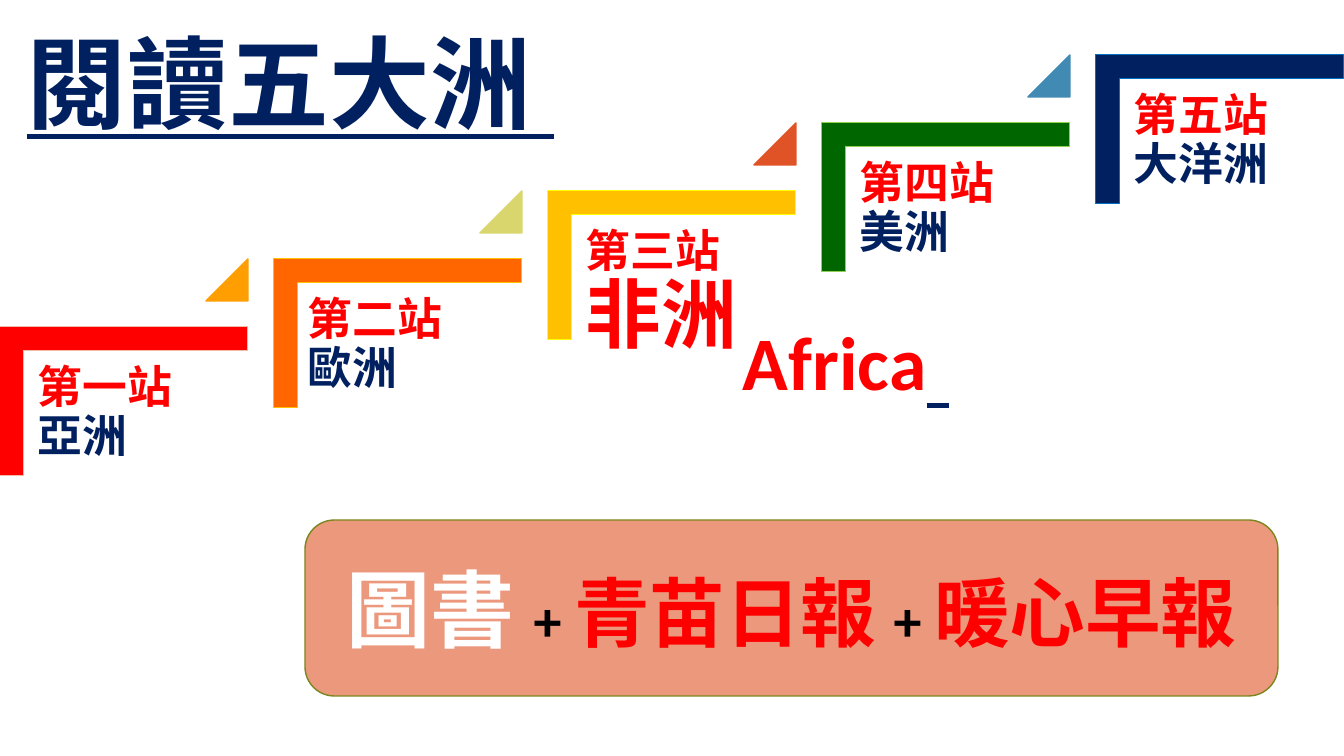
from lxml import etree
from pptx import Presentation, util as u
from pptx.dml.color import RGBColor
from pptx.enum import shapes, text
from pptx.oxml import ns

PX = 914400 / 100.8  # EMU in one px
THEME = {
    "cjk": "Noto Sans CJK SC", "latin": "Calibri",
    "red": "FF0000", "navy": "002060", "white": "FFFFFF", "black": "000000",
    "banner": "EC987D", "banner_line": "7B871D",
    "title": 72, "books": 60, "large": 54, "plus": 40, "step": 32,
}


def add_span(para, words, size, color, font="cjk", underline=False):
    span = para.add_run()
    span.text = words
    span.font.size = u.Pt(THEME[size])
    span.font.bold = True
    span.font.underline = underline
    span.font.name = THEME[font]
    span.font.color.rgb = RGBColor.from_string(THEME[color])
    east_asian = etree.SubElement(span.font._element, ns.qn("a:ea"))
    east_asian.set("typeface", THEME["cjk"])


def add_item(kind, at, fill=None, line=None):
    """Add a preset shape, or a wrapping text box when kind is None."""
    left, top, width, height = [round(n * PX) for n in at]
    if kind is None:
        item = page.shapes.add_textbox(left, top, width, height)
        item.text_frame.word_wrap = True
        return item
    item = page.shapes.add_shape(kind, left, top, width, height)
    item.shadow.inherit = False
    item.fill.solid()
    item.fill.fore_color.rgb = RGBColor.from_string(fill)
    item.line.color.rgb = RGBColor.from_string(line)
    item.line.width = u.Pt(1)
    return item


deck = Presentation()
deck.slide_width, deck.slide_height = round(1344 * PX), round(756 * PX)
page = deck.slides.add_slide(deck.slide_layouts[6])

# Staircase: station, continent, size, colour, bar fill, bar line, triangle, text nudge
steps = [
    ("第一站", "亞洲", "step", "navy", "FF0000", "F2BAA9", "FE9E00", 0),
    ("第二站", "歐洲", "step", "navy", "FF6600", "FFC000", "D9D66D", -4),
    ("第三站", "非洲", "large", "red", "FFC000", "FFFF00", "DF5327", 0),
    ("第四站", "美洲", "step", "navy", "006600", "92D050", "418AB3", 0),
    ("第五站", "大洋洲", "step", "navy", "002060", "0070C0", None, 0),
]
for index, (station, continent, size, color, fill, line, triangle, nudge) in enumerate(steps):
    across, up = 274 * index, 68 * index
    bar = add_item(shapes.MSO_SHAPE.CORNER, (49 + across, 277 - up, 149, 248), fill, line)
    bar.rotation = 90
    bar.adjustments[0] = bar.adjustments[1] = 0.16

    label = add_item(None, (25 + across + nudge, 352 - up, 224, 195))
    frame = label.text_frame
    frame.margin_left = frame.margin_right = round(13 * PX)
    frame.margin_top = frame.margin_bottom = round(13 * PX)
    para = frame.paragraphs[0]
    para.line_spacing = 0.9
    add_span(para, station, "step", "red")
    para.add_line_break()
    add_span(para, continent, size, color)

    if triangle:
        marker = add_item(shapes.MSO_SHAPE.ISOSCELES_TRIANGLE,
                          (206 + across, 259 - up, 42, 42), triangle, triangle)
        marker.adjustments[0] = 1

# Title
title = add_item(None, (17, 19, 550, 127))
title.text_frame.vertical_anchor = text.MSO_ANCHOR.BOTTOM
para = title.text_frame.paragraphs[0]
para.line_spacing = 0.8
add_span(para, "閱讀五大洲 ", "title", "navy", underline=True)

# Reading materials banner
banner = add_item(shapes.MSO_SHAPE.ROUNDED_RECTANGLE, (305, 520, 973, 176),
                  THEME["banner"], THEME["banner_line"])
banner.text_frame.word_wrap = True
banner.text_frame.vertical_anchor = text.MSO_ANCHOR.MIDDLE
para = banner.text_frame.paragraphs[0]
para.alignment = text.PP_ALIGN.CENTER
for words, size, color in [
    ("圖書 ", "books", "white"),
    ("+ ", "plus", "black"),
    ("青苗日報 ", "large", "red"),
    ("+ ", "plus", "black"),
    ("暖心早報", "large", "red"),
]:
    add_span(para, words, size, color, font="latin")

# English name of the current stop
africa = add_item(None, (733, 290, 273, 127))
africa.text_frame.vertical_anchor = text.MSO_ANCHOR.BOTTOM
para = africa.text_frame.paragraphs[0]
para.line_spacing = 0.9
add_span(para, "Africa", "large", "red", font="latin")
add_span(para, " ", "title", "navy", underline=True)

deck.save("out.pptx")
